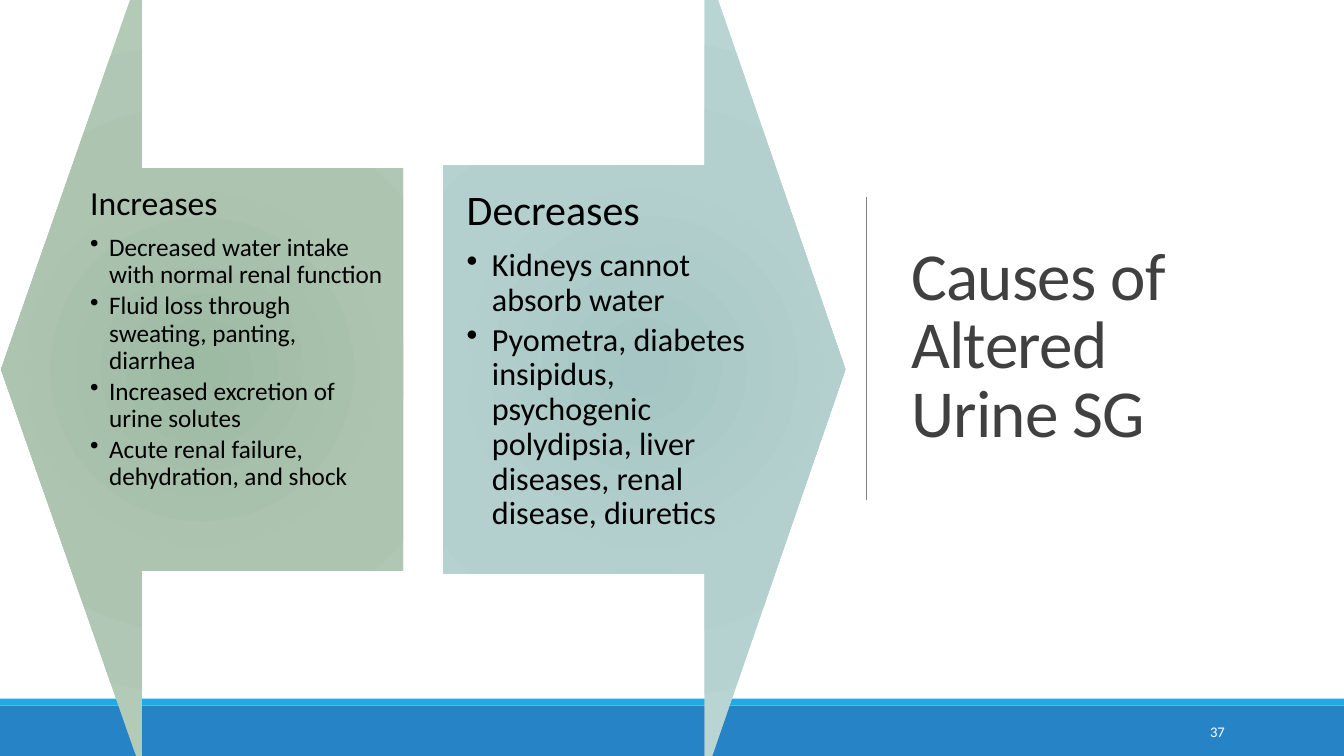
from dataclasses import dataclass
from lxml.etree import SubElement
from pptx import Presentation
from pptx.dml.color import RGBColor as Rgb
from pptx.enum.shapes import MSO_CONNECTOR as Conn, MSO_SHAPE as Kind
from pptx.enum.text import MSO_ANCHOR as Anchor, PP_ALIGN as Align
from pptx.oxml import parse_xml
from pptx.oxml.ns import nsdecls, qn
from pptx.util import Pt


@dataclass(frozen=True)
class Theme:
    font: str = "Calibri"
    ink: str = "000000"
    head: str = "404040"
    white: str = "FFFFFF"
    rule: str = "808080"
    band: str = "2683C6"
    strip: str = "1CADE4"
    green: tuple = ("9DBAA3", "ADC4B1", "B4CDB9")
    teal: tuple = ("A5C6C4", "B4D0CE", "BAD7D5")
    title: float = 48
    number: float = 10.5


@dataclass(frozen=True)
class Box:
    x: float
    y: float
    w: float
    h: float

    def place(self):
        return Pt(self.x), Pt(self.y), Pt(self.w), Pt(self.h)


THEME = Theme()
WIDE, HIGH = 960, 540
SHAFT, POINT = 0.5, 0.35  # arrow shaft and head, as shares of its box


def add_run(para, text, size, color):
    run = para.add_run()
    run.text = text
    run.font.name = THEME.font
    run.font.size = Pt(size)
    run.font.color.rgb = Rgb.from_string(color)
    return run


def add_text(slide, box, anchor=Anchor.TOP, inset=None):
    frame = slide.shapes.add_textbox(*box.place()).text_frame
    frame.word_wrap = True
    frame.vertical_anchor = anchor
    if inset is not None:
        frame.margin_left = frame.margin_right = Pt(inset)
        frame.margin_top = frame.margin_bottom = Pt(inset)
    return frame


def add_bar(slide, box, color):
    bar = slide.shapes.add_shape(Kind.RECTANGLE, *box.place())
    bar.shadow.inherit = False
    bar.fill.solid()
    bar.fill.fore_color.rgb = Rgb.from_string(color)
    bar.line.fill.background()


def add_bullet(para, indent):
    props = para._p.get_or_add_pPr()
    props.set("marL", str(Pt(indent)))
    props.set("indent", str(-Pt(indent)))
    SubElement(props, qn("a:buChar")).set("char", "•")


def glow(shape, colors):
    """Fill the shape with a round gradient, from its centre outward."""
    stops = "".join(
        f'<a:gs pos="{pos}"><a:srgbClr val="{color}"/></a:gs>'
        for pos, color in zip((0, 45000, 100000), colors))
    fill = parse_xml(
        f'<a:gradFill {nsdecls("a")} rotWithShape="1"><a:gsLst>{stops}</a:gsLst>'
        '<a:path path="circle"><a:fillToRect l="100000" t="100000" '
        'r="100000" b="100000"/></a:path></a:gradFill>')
    shape._element.spPr.find(qn("a:prstGeom")).addnext(fill)


def add_arrow(slide, box, turn, colors):
    # An up arrow turned on its side: width and height swap about the centre
    side = Box(box.x + (box.w - box.h) / 2, box.y + (box.h - box.w) / 2,
               box.h, box.w)
    arrow = slide.shapes.add_shape(Kind.UP_ARROW, *side.place())
    arrow.rotation = turn
    arrow.adjustments[0] = SHAFT
    arrow.adjustments[1] = POINT
    arrow.shadow.inherit = False
    arrow.line.fill.background()
    glow(arrow, colors)


def add_cause(slide, box, turn, colors, head, items, sizes, inset, indent):
    add_arrow(slide, box, turn, colors)

    # The text fills the shaft and half of the head
    skip = box.w * POINT / 2
    left = box.x + skip if turn == 270 else box.x
    area = Box(left, box.y + box.h * (1 - SHAFT) / 2,
               box.w - skip, box.h * SHAFT)
    frame = add_text(slide, area, inset=inset)
    big, small = sizes
    para = frame.paragraphs[0]
    para.line_spacing = 0.9
    para.space_after = Pt(big * 0.35)
    add_run(para, head, big, THEME.ink)
    for item in items:
        para = frame.add_paragraph()
        para.level = 1
        para.line_spacing = 0.9
        para.space_after = Pt(small * 0.15)
        add_bullet(para, indent)
        add_run(para, item, small, THEME.ink)


def add_title(slide, box, text):
    # Rule to the left of the title
    x, mid, half = box.x - 25.2, box.y + box.h / 2, 108
    rule = slide.shapes.add_connector(
        Conn.STRAIGHT, Pt(x), Pt(mid - half), Pt(x), Pt(mid + half))
    rule.line.color.rgb = Rgb.from_string(THEME.rule)
    rule.line.width = Pt(0.5)
    SubElement(rule._element.spPr, qn("a:effectLst"))

    para = add_text(slide, box, Anchor.MIDDLE).paragraphs[0]
    para.line_spacing = 0.85
    run = add_run(para, text, THEME.title, THEME.head)
    run.font._element.set("spc", "-50")


def add_foot(slide, box):
    thin = 5
    add_bar(slide, Box(box.x, box.y + thin, box.w, box.h - thin), THEME.band)
    add_bar(slide, Box(box.x, box.y, box.w, thin), THEME.strip)


def add_number(slide, box, text):
    para = add_text(slide, box, Anchor.MIDDLE).paragraphs[0]
    para.alignment = Align.RIGHT
    para.space_after = Pt(6)
    add_run(para, text, THEME.number, THEME.white)


def main():
    deck = Presentation()
    deck.slide_width, deck.slide_height = Pt(WIDE), Pt(HIGH)
    slide = deck.slides.add_slide(deck.slide_layouts[6])

    add_foot(slide, Box(0, 499, WIDE, HIGH - 499))
    add_title(slide, Box(643.7, 49.7, 265.7, 398.2),
              "Causes of Altered Urine SG")
    add_cause(slide, Box(0.7, -23.8, 287.3, 575.3), 270, THEME.green,
              "Increases",
              ["Decreased water intake with normal renal function",
               "Fluid loss through sweating, panting, diarrhea",
               "Increased excretion of urine solutes",
               "Acute renal failure, dehydration, and shock"],
              sizes=(24, 18), inset=13.5, indent=13.5)
    add_cause(slide, Box(316.6, -27.7, 287.3, 583.2), 90, THEME.teal,
              "Decreases",
              ["Kidneys cannot absorb water",
               "Pyometra, diabetes insipidus, psychogenic polydipsia, "
               "liver diseases, renal disease, diuretics"],
              sizes=(30, 23), inset=16.8, indent=18)
    add_number(slide, Box(779, 508.5, 103, 28.8), "37")
    deck.save("out.pptx")


if __name__ == "__main__":
    main()
